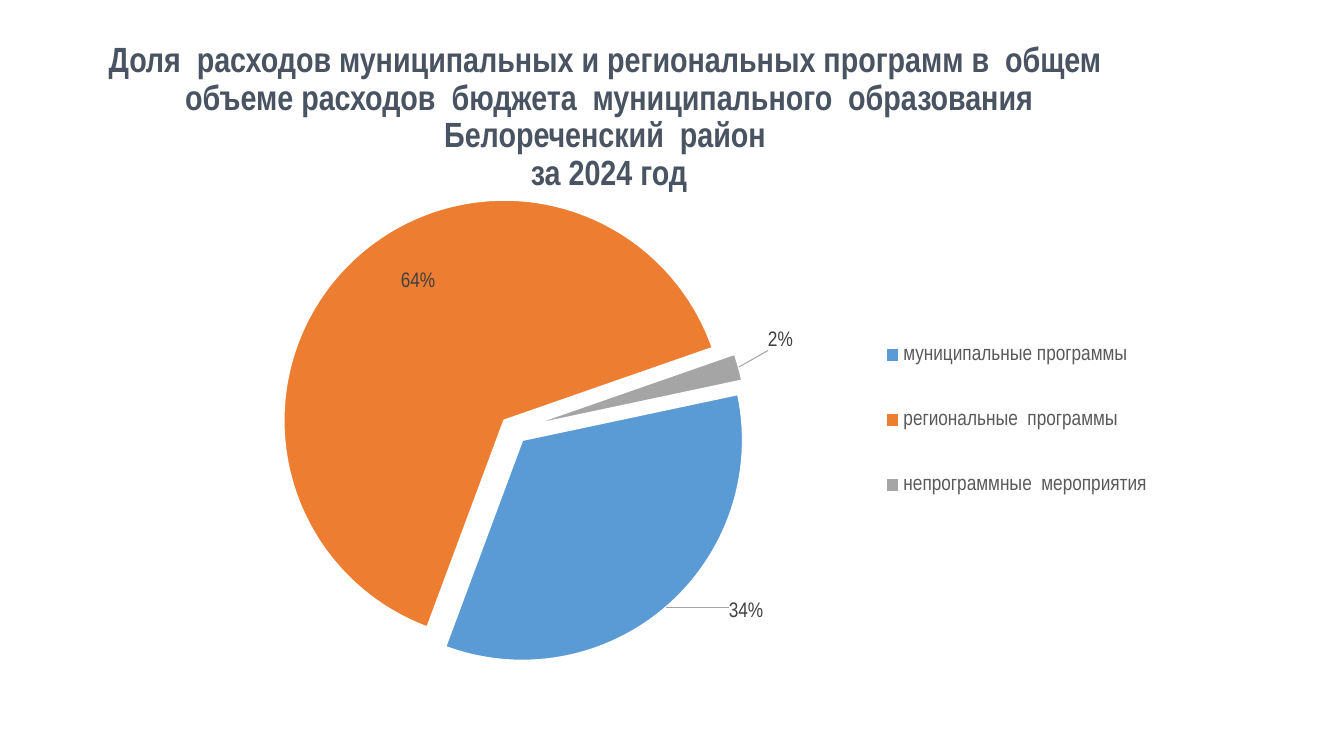
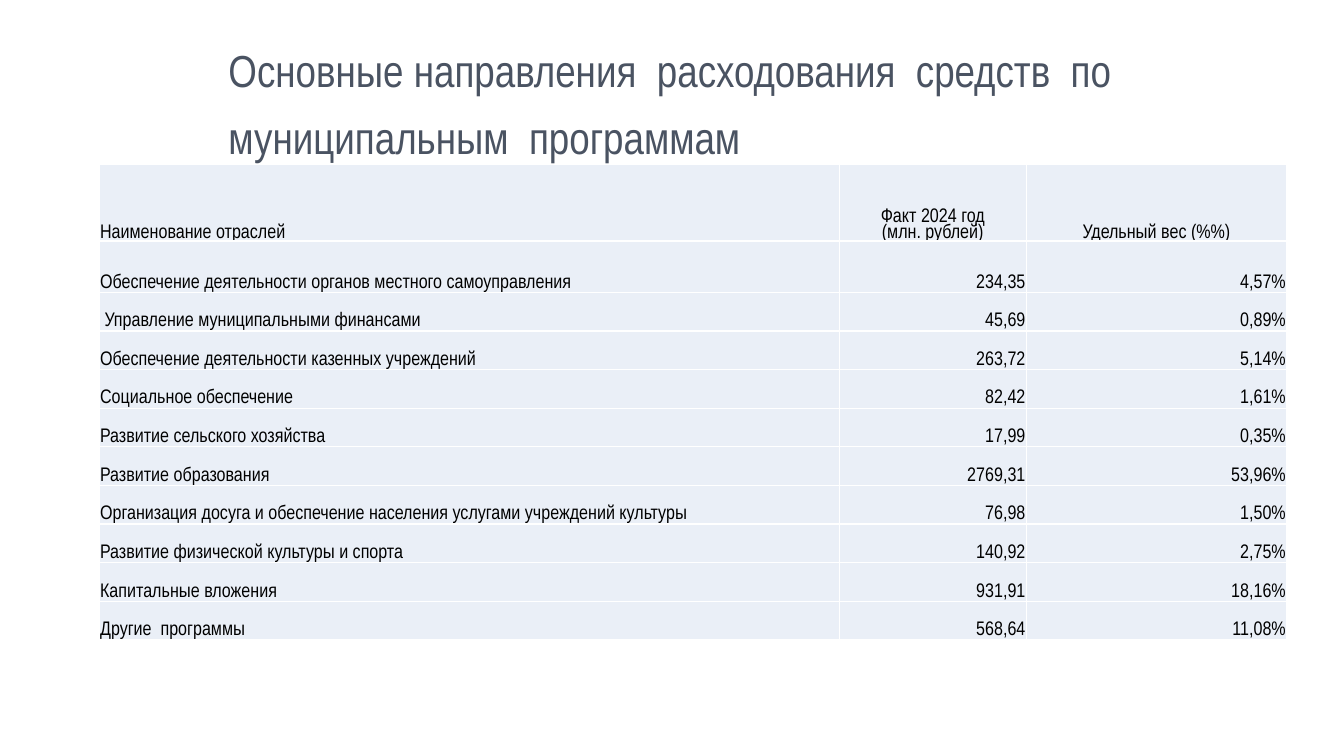
from lxml.etree import SubElement
from pptx import Presentation
from pptx.chart.data import CategoryChartData
from pptx.dml.color import RGBColor
from pptx.enum.chart import XL_CHART_TYPE, XL_LABEL_POSITION, XL_LEGEND_POSITION
from pptx.enum.text import MSO_ANCHOR, MSO_AUTO_SIZE, PP_ALIGN
from pptx.oxml import parse_xml
from pptx.oxml.ns import nsdecls, qn
from pptx.util import Inches, Pt

UNIT = Inches(1) / 12  # the slide is a grid of 160 columns and 90 rows
COLORS = {
    "title": "4A5362",
    "text": "000000",
    "legend": "595959",
    "label": "404040",
    "leader": "A5A5A5",
    "cell": "EAEFF7",
    "white": "FFFFFF",
}
FONT = "Arial Narrow"
TITLE_ONLY = 5

# category, percent, colour, label position, label shift as shares of the chart
SHARES = [
    ("муниципальные программы", 34, "5B9BD5", XL_LABEL_POSITION.OUTSIDE_END, (0.05, -0.02)),
    ("региональные  программы", 64, "ED7D31", XL_LABEL_POSITION.INSIDE_END, (0.04, 0.01)),
    ("непрограммные  мероприятия", 2, "A5A5A5", XL_LABEL_POSITION.OUTSIDE_END, (0.02, -0.03)),
]

HEADER = ("Наименование отраслей", "Факт 2024 год\n(млн. рублей)", "Удельный вес (%%)")
EXPENSES = [
    ("Обеспечение деятельности органов местного самоуправления", "234,35", "4,57%"),
    (" Управление муниципальными финансами", "45,69", "0,89%"),
    ("Обеспечение деятельности казенных учреждений", "263,72", "5,14%"),
    ("Социальное обеспечение", "82,42", "1,61%"),
    ("Развитие сельского хозяйства", "17,99", "0,35%"),
    ("Развитие образования", "2769,31", "53,96%"),
    ("Организация досуга и обеспечение населения услугами учреждений культуры", "76,98", "1,50%"),
    ("Развитие физической культуры и спорта", "140,92", "2,75%"),
    ("Капитальные вложения", "931,91", "18,16%"),
    ("Другие  программы", "568,64", "11,08%"),
]
COLUMN_WIDTHS = (88.1, 22.3, 31)
ROW_HEIGHTS = (9.1, 6.1) + (4.6,) * 9


def grid(*cells):
    return [round(cell * UNIT) for cell in cells]


def style_font(font, size, color, bold=False):
    font.name = FONT
    font.size = Pt(size)
    font.bold = bold
    font.color.rgb = RGBColor.from_string(COLORS[color])


def add_titled_slide(presentation, text, box, size, line_spacing, alignment, bold=False):
    slide = presentation.slides.add_slide(presentation.slide_layouts[TITLE_ONLY])
    title = slide.shapes.title
    title.left, title.top, title.width, title.height = grid(*box)
    text_frame = title.text_frame
    text_frame.text = text
    text_frame.word_wrap = True
    text_frame.auto_size = MSO_AUTO_SIZE.NONE
    text_frame.vertical_anchor = MSO_ANCHOR.MIDDLE
    paragraph = text_frame.paragraphs[0]
    paragraph.alignment = alignment
    paragraph.line_spacing = line_spacing
    for run in paragraph.runs:
        style_font(run.font, size, "title", bold)
    return slide


def manual_layout(**settings):
    """Return a c:layout element with the settings in schema order."""
    children = "".join(f'<c:{name} val="{value}"/>' for name, value in settings.items())
    return parse_xml(f'<c:layout {nsdecls("c")}><c:manualLayout>{children}</c:manualLayout></c:layout>')


def replace_layout(parent, layout, index):
    for old in parent.findall(qn("c:layout")):
        parent.remove(old)
    parent.insert(index, layout)


def style_label(label, position, shift):
    style_font(label.font, 15, "label")
    label.position = position
    element = label._get_or_add_dLbl()
    element.find(qn("c:showVal")).set("val", "0")
    element.find(qn("c:showPercent")).set("val", "1")
    element.insert(1, manual_layout(x=shift[0], y=shift[1]))
    element.insert(2, parse_xml(f'<c:numFmt {nsdecls("c")} formatCode="0%" sourceLinked="0"/>'))


def add_leader_lines(labels):
    element = labels._element
    for old in element.findall(qn("c:showLeaderLines")):
        element.remove(old)
    SubElement(element, qn("c:showLeaderLines")).set("val", "1")
    element.append(parse_xml(
        f'<c:leaderLines {nsdecls("c", "a")}><c:spPr><a:ln w="9525"><a:solidFill>'
        f'<a:srgbClr val="{COLORS["leader"]}"/></a:solidFill></a:ln></c:spPr></c:leaderLines>'))


def add_share_pie(slide, box):
    data = CategoryChartData()
    data.categories = [share[0] for share in SHARES]
    data.add_series("Series 1", [share[1] for share in SHARES])
    chart = slide.shapes.add_chart(XL_CHART_TYPE.PIE, *grid(*box), data).chart
    chart.has_title = False
    style_font(chart.font, 10, "text")

    chart.has_legend = True
    legend = chart.legend
    legend.position = XL_LEGEND_POSITION.RIGHT
    legend.include_in_layout = False
    style_font(legend.font, 15, "legend")
    edges = {"xMode": "edge", "yMode": "edge"}
    replace_layout(legend._element, manual_layout(**edges, x=0.68, y=0.24, w=0.24, h=0.48), 1)

    plot = chart.plots[0]
    plot.vary_by_categories = True
    replace_layout(plot._element.getparent(), manual_layout(
        layoutTarget="inner", **edges, x=0.17, y=0.03, w=0.4, h=0.94), 0)
    angle = plot._element.find(qn("c:firstSliceAng"))
    if angle is None:
        angle = SubElement(plot._element, qn("c:firstSliceAng"))
    angle.set("val", "78")

    series = plot.series[0]
    labels = series.data_labels
    labels.show_value = False
    labels.show_percentage = True
    style_font(labels.font, 15, "label")
    for index, (_, _, color, position, shift) in enumerate(SHARES):
        point = series.points[index]
        point.format.fill.solid()
        point.format.fill.fore_color.rgb = RGBColor.from_string(color)
        point.format.line.color.rgb = RGBColor.from_string(COLORS["white"])
        point.format.line.width = Pt(1.5)
        style_label(point.data_label, position, shift)
    add_leader_lines(labels)
    explosion = parse_xml(f'<c:explosion {nsdecls("c")} val="6"/>')
    series._element.find(qn("c:dPt")).addprevious(explosion)
    for data_point in series._element.findall(qn("c:dPt")):
        own_explosion = parse_xml(f'<c:explosion {nsdecls("c")} val="6"/>')
        data_point.find(qn("c:spPr")).addprevious(own_explosion)


def add_cell_borders(cell):
    properties = cell._tc.get_or_add_tcPr()
    for index, side in enumerate(("lnL", "lnR", "lnT", "lnB")):
        properties.insert(index, parse_xml(
            f'<a:{side} {nsdecls("a")} w="12700"><a:solidFill>'
            f'<a:srgbClr val="{COLORS["white"]}"/></a:solidFill></a:{side}>'))


def fill_cell(cell, text, alignment, line_spacing):
    cell.text_frame.text = text
    cell.vertical_anchor = MSO_ANCHOR.BOTTOM
    cell.margin_left = cell.margin_right = cell.margin_top = Inches(0.01)
    cell.margin_bottom = 0
    cell.fill.solid()
    cell.fill.fore_color.rgb = RGBColor.from_string(COLORS["cell"])
    add_cell_borders(cell)
    for paragraph in cell.text_frame.paragraphs:
        paragraph.alignment = alignment
        paragraph.line_spacing = line_spacing
        for run in paragraph.runs:
            style_font(run.font, 14, "text")


def add_expense_table(slide, left, top):
    rows = [HEADER, *EXPENSES]
    box = grid(left, top, sum(COLUMN_WIDTHS), sum(ROW_HEIGHTS))
    table = slide.shapes.add_table(len(rows), len(HEADER), *box).table
    table.first_row = table.horz_banding = False
    for column, width in zip(table.columns, grid(*COLUMN_WIDTHS)):
        column.width = width
    for row, height in zip(table.rows, grid(*ROW_HEIGHTS)):
        row.height = height
    for row_index, texts in enumerate(rows):
        is_header = row_index == 0
        number_alignment = PP_ALIGN.CENTER if is_header else PP_ALIGN.RIGHT
        for column_index, text in enumerate(texts):
            alignment = number_alignment if column_index else PP_ALIGN.LEFT
            fill_cell(table.cell(row_index, column_index), text, alignment, 0.82 if is_header else 1)


def main():
    presentation = Presentation()
    presentation.slide_width, presentation.slide_height = grid(160, 90)

    slide = add_titled_slide(
        presentation,
        "Доля  расходов муниципальных и региональных программ в  общем  объеме расходов  "
        "бюджета  муниципального  образования Белореченский  район \vза 2024 год",
        (11, 5, 123, 18), 25, 0.9, PP_ALIGN.CENTER, bold=True)
    add_share_pie(slide, (9.6, 21.4, 139.3, 59.6))

    slide = add_titled_slide(
        presentation,
        "Основные направления  расходования  средств  по муниципальным  программам",
        (26, 2.5, 108, 18), 32, 1.24, PP_ALIGN.LEFT)
    add_expense_table(slide, 11.8, 19.6)

    presentation.save("out.pptx")


if __name__ == "__main__":
    main()
